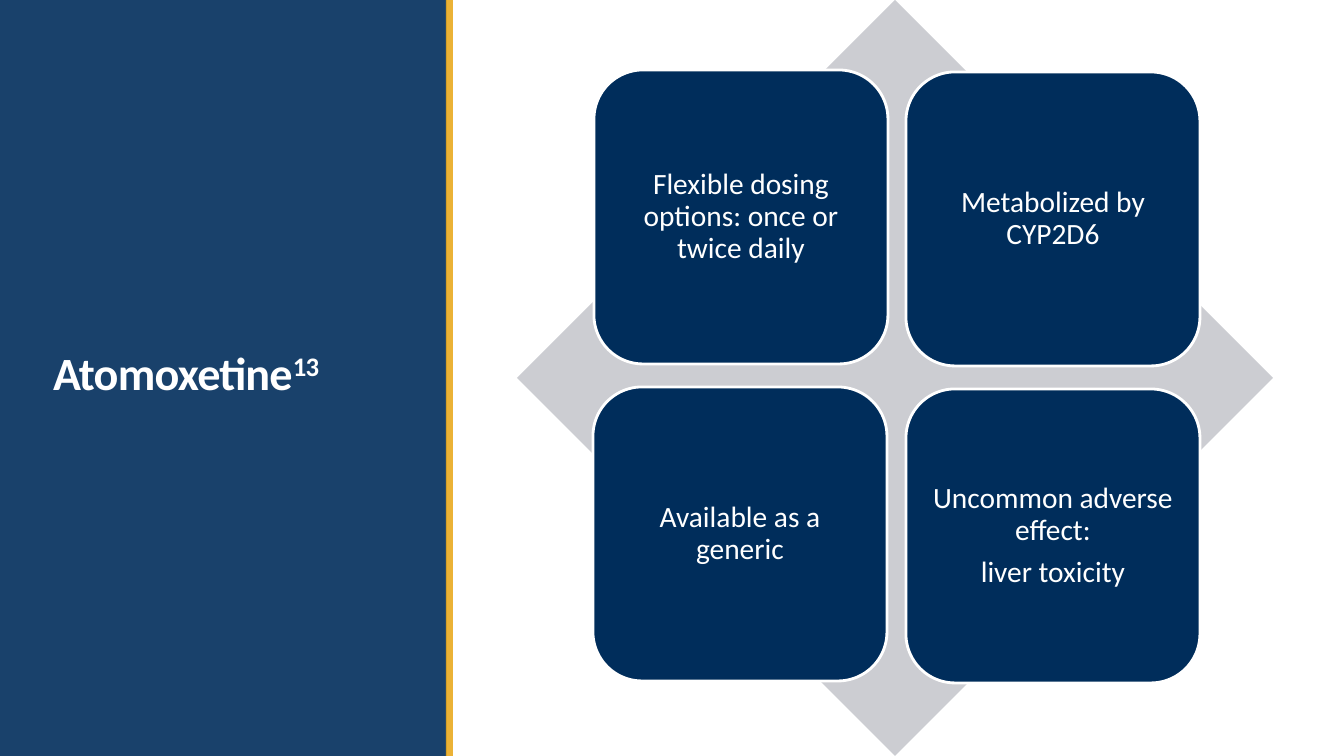
"""Build the Atomoxetine slide: a title panel beside four tiles on a diamond."""
from lxml import etree
from pptx import Presentation
from pptx.dml.color import RGBColor
from pptx.enum.shapes import MSO_SHAPE
from pptx.enum.text import MSO_ANCHOR, PP_ALIGN
from pptx.oxml.ns import qn
from pptx.util import Pt

RECT, DIAMOND, ROUNDED = MSO_SHAPE.RECTANGLE, MSO_SHAPE.DIAMOND, MSO_SHAPE.ROUNDED_RECTANGLE
LEFT, CENTER = PP_ALIGN.LEFT, PP_ALIGN.CENTER
MIDDLE, BOTTOM = MSO_ANCHOR.MIDDLE, MSO_ANCHOR.BOTTOM

DRUG, CITATION = "Atomoxetine", "13"
TILES = [
    (593, 387, ["Available as a generic"]),
    (906, 72, ["Metabolized by CYP2D6"]),
    (594, 70, ["Flexible dosing options: once or twice daily"]),
    (906, 389, ["Uncommon adverse effect:", "liver toxicity"]),
]
COLORS = {"navy": "002D5B", "gold": "E9AA21", "gray": "CCCDD2", "white": "FFFFFF"}
FONT = "Calibri"
WIDTH, HEIGHT = 1344, 756
TILE_SIZE = 294
EMU_PER_PX = 12192000 / WIDTH


def px(length):
    return round(length * EMU_PER_PX)


def color(name):
    return RGBColor.from_string(COLORS[name])


def add_block(slide, preset, box, fill, opacity=100, outline=None):
    block = slide.shapes.add_shape(preset, *map(px, box))
    block.shadow.inherit = False
    block.fill.solid()
    block.fill.fore_color.rgb = color(fill)
    if opacity < 100:
        tint = block.fill._xPr.find(qn("a:solidFill"))[0]
        etree.SubElement(tint, qn("a:alpha")).set("val", str(opacity * 1000))
    if outline:
        block.line.color.rgb = color(outline)
        block.line.width = Pt(2)
    else:
        block.line.fill.background()
    return block


def write(shape, lines, size, align, anchor, spacing, insets, after=0, bold=False):
    frame = shape.text_frame
    frame.word_wrap = True
    frame.vertical_anchor = anchor
    (frame.margin_left, frame.margin_top,
     frame.margin_right, frame.margin_bottom) = map(px, insets)
    frame.text = "\n".join(lines)
    for paragraph in frame.paragraphs:
        paragraph.alignment = align
        paragraph.line_spacing = spacing
        paragraph.space_before = Pt(0)
        paragraph.space_after = Pt(after)
        for run in paragraph.runs:
            style(run, size, bold)


def style(run, size, bold):
    run.font.name = FONT
    run.font.size = Pt(size)
    run.font.bold = bold
    run.font.color.rgb = color("white")


def add_title(slide):
    title = slide.shapes.title
    slide.shapes._spTree.append(title._element)
    title.left, title.top, title.width, title.height = map(px, (43, 204, 353, 252))
    write(title, [DRUG], 33, LEFT, BOTTOM, 0.85, (10, 5, 10, 56), bold=True)
    paragraph = title.text_frame.paragraphs[0]
    citation = paragraph.add_run()
    citation.text = CITATION
    style(citation, 33, True)
    citation.font._element.set("baseline", "30000")
    for run in paragraph.runs:
        run.font._element.set("spc", "-50")


def main():
    deck = Presentation()
    deck.slide_width, deck.slide_height = px(WIDTH), px(HEIGHT)
    slide = deck.slides.add_slide(deck.slide_layouts[5])
    add_block(slide, RECT, (0, 0, 447, HEIGHT), "navy", opacity=90)
    add_block(slide, RECT, (446, 0, 7, HEIGHT), "gold", opacity=90)
    add_title(slide)
    add_block(slide, DIAMOND, (517, 0, HEIGHT, HEIGHT), "gray")
    for left, top, lines in TILES:
        tile = add_block(slide, ROUNDED, (left, top, TILE_SIZE, TILE_SIZE), "navy", outline="white")
        write(tile, lines, 21, CENTER, MIDDLE, 0.9, (9, 9, 9, 9), after=7.35)
    deck.save("out.pptx")


if __name__ == "__main__":
    main()
